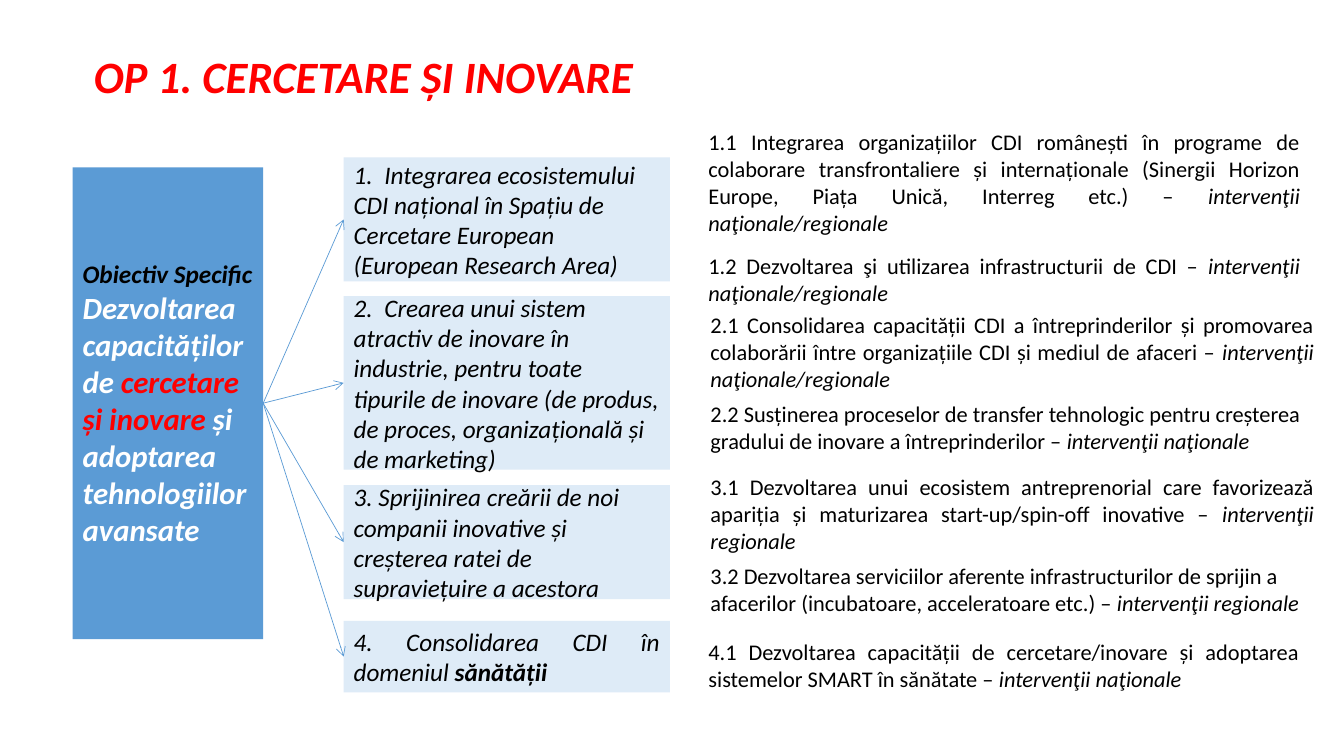
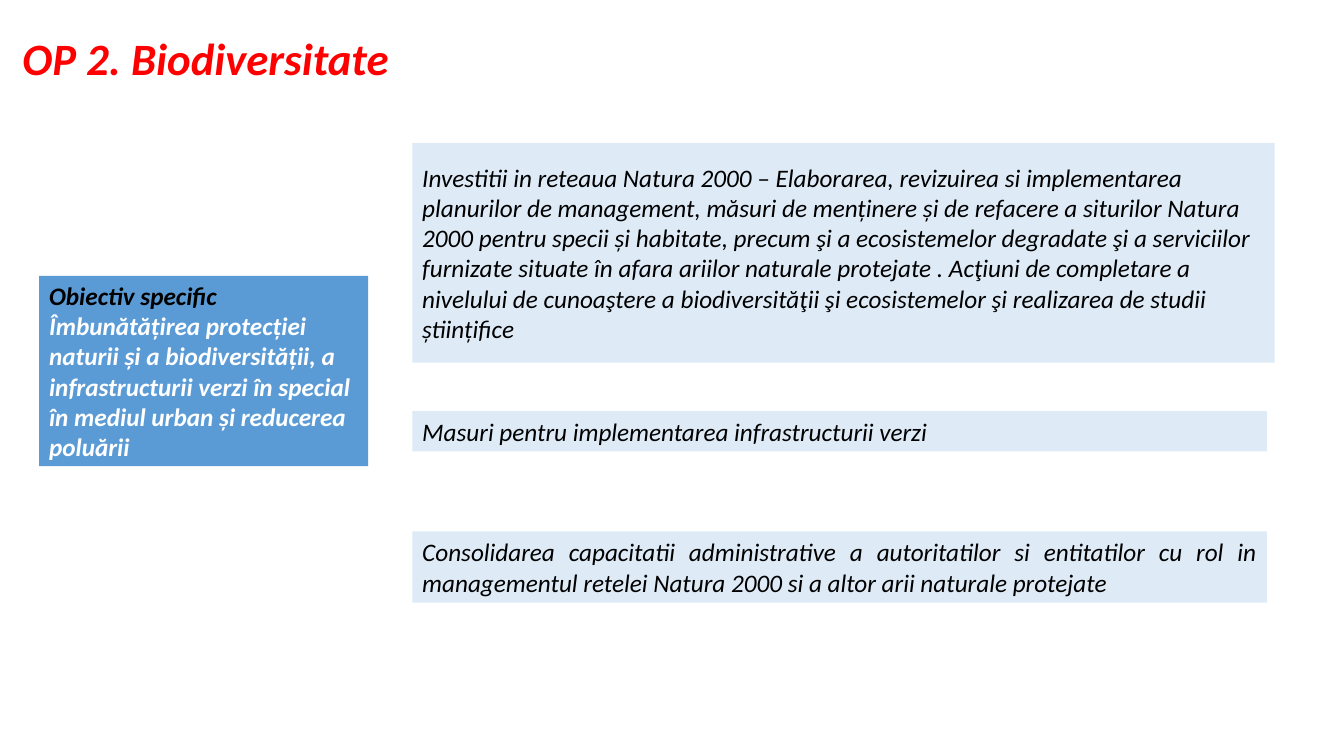
from lxml import etree
from pptx import Presentation
from pptx.dml.color import RGBColor
from pptx.enum.shapes import MSO_CONNECTOR, MSO_SHAPE
from pptx.enum.text import MSO_ANCHOR, PP_ALIGN
from pptx.oxml.ns import qn
from pptx.util import Pt

BLUE, PALE, RED, BLACK, WHITE = "5B9BD5", "DEEBF7", "FF0000", "000000", "FFFFFF"
TITLE = dict(size=Pt(32), bold=True, italic=True, color=RED)
OBJECTIVE = dict(size=Pt(18), bold=True, italic=True, color=WHITE)
LARGE = dict(size=Pt(22))
MEASURE = dict(size=Pt(18), italic=True, color=BLACK)
DETAIL = dict(size=Pt(16), color=BLACK)
LEFT, JUSTIFY = PP_ALIGN.LEFT, PP_ALIGN.JUSTIFY
RIGHT_SITE, LEFT_SITE = 3, 1
NUMBER_TAB = Pt(22)

NATIONAL = "intervenţii naţionale"
REGIONAL = "intervenţii regionale"
BOTH = "intervenţii naţionale/regionale"


def rgb(color):
    return RGBColor.from_string(color)


def add_number_tab(p):
    tabs = etree.SubElement(p._p.get_or_add_pPr(), qn("a:tabLst"))
    etree.SubElement(tabs, qn("a:tab"), pos=str(int(NUMBER_TAB)), algn="l")


def write(sp, paragraphs, base, inset=(0, 0), anchor=MSO_ANCHOR.TOP, before=0, after=0):
    """Fill a shape; a paragraph is (alignment, [(text, format changes), ...])."""
    tf = sp.text_frame
    x, y = map(Pt, inset)
    frame = dict(word_wrap=True, vertical_anchor=anchor, margin_left=x,
                 margin_right=x, margin_top=y, margin_bottom=y)
    for name, value in frame.items():
        setattr(tf, name, value)
    for i, (align, runs) in enumerate(paragraphs):
        p = tf.add_paragraph() if i else tf.paragraphs[0]
        p.alignment = align
        p.space_before, p.space_after = Pt(before if i else 0), Pt(after)
        if any("\t" in text for text, _ in runs):
            add_number_tab(p)
        for text, changes in runs:
            r = p.add_run()
            r.text = text
            style = {"name": "Calibri", **base, **changes}
            r.font.color.rgb = rgb(style.pop("color"))
            for name, value in style.items():
                setattr(r.font, name, value)


def add_text(s, box, paragraphs, base, **layout):
    sp = s.shapes.add_textbox(*map(Pt, box))
    write(sp, paragraphs, base, **layout)


def add_title(s, left, top, text):
    add_text(s, (left, top, 850, 39), [(LEFT, [(text, {})])], TITLE)


def add_panel(s, box, fill, paragraphs, base):
    sp = s.shapes.add_shape(MSO_SHAPE.RECTANGLE, *map(Pt, box))
    sp.shadow.inherit = False
    sp.fill.solid()
    sp.fill.fore_color.rgb = rgb(fill)
    sp.line.fill.background()
    write(sp, paragraphs, base, inset=(7.2, 3.6), anchor=MSO_ANCHOR.MIDDLE)
    return sp


def add_measures(s, left, measures):
    """Stack pale panels given as (top, width, height, alignment, runs)."""
    return [add_panel(s, (left, top, width, height), PALE, [(align, runs)], MEASURE)
            for top, width, height, align, runs in measures]


def add_details(s, box, details, after=0):
    paragraphs = [(align, [(f"{text} – ", {}), (scope, dict(italic=True))])
                  for align, text, scope in details]
    add_text(s, box, paragraphs, DETAIL, before=6, after=after)


def add_arrow(s, source, target):
    line = s.shapes.add_connector(MSO_CONNECTOR.STRAIGHT, 0, 0, 0, 0)
    line.begin_connect(source, RIGHT_SITE)
    line.end_connect(target, LEFT_SITE)
    line.line.color.rgb = rgb(BLUE)
    line.line.width = Pt(0.5)
    etree.SubElement(line.line._get_or_add_ln(), qn("a:tailEnd"), type="arrow")
    etree.SubElement(line._element.spPr, qn("a:effectLst"))


def build_research(s):
    add_title(s, 67, 34.5, "OP 1. CERCETARE ȘI INOVARE")
    objective = add_panel(s, (52, 119.5, 136, 337), BLUE, [(LEFT, [
        ("Obiectiv Specific ", dict(color=BLACK)),
        ("Dezvoltarea capacităților de ", LARGE),
        ("cercetare și inovare ", {**LARGE, "color": RED}),
        ("și adoptarea tehnologiilor avansate", LARGE)])], OBJECTIVE)
    measures = add_measures(s, 245.5, [
        (112.5, 233, 88.5, LEFT, [(
            "1.\tIntegrarea ecosistemului CDI național în Spațiu de Cercetare "
            "European (European Research Area)", {})]),
        (211.5, 233, 124, LEFT, [(
            "2.\tCrearea unui sistem atractiv de inovare în industrie, pentru toate "
            "tipurile de inovare (de produs, de proces, organizațională și de marketing)", {})]),
        (346.5, 233, 81.5, LEFT, [(
            "3. Sprijinirea creării de noi companii inovative și creșterea ratei de "
            "supraviețuire a acestora", {})]),
        (443.5, 233, 51, JUSTIFY, [
            ("4. Consolidarea CDI în domeniul ", {}), ("sănătății", dict(bold=True))]),
    ])
    for measure in measures:
        add_arrow(s, objective, measure)
    add_details(s, (506, 91.5, 422.5, 128), [
        (JUSTIFY, "1.1 Integrarea organizațiilor CDI românești în programe de colaborare "
         "transfrontaliere și internaționale (Sinergii Horizon Europe, Piața Unică, "
         "Interreg etc.)", BOTH),
        (JUSTIFY, "1.2 Dezvoltarea şi utilizarea infrastructurii de CDI", BOTH)], after=6)
    add_details(s, (507.5, 222.5, 431, 103), [
        (JUSTIFY, "2.1 Consolidarea capacității CDI a întreprinderilor și promovarea "
         "colaborării între organizațiile CDI și mediul de afaceri", BOTH),
        (LEFT, "2.2 Susținerea proceselor de transfer tehnologic pentru creșterea "
         "gradului de inovare a întreprinderilor", NATIONAL)])
    add_details(s, (507.5, 338, 431, 103), [
        (JUSTIFY, "3.1 Dezvoltarea unui ecosistem antreprenorial care favorizează apariția "
         "și maturizarea start-up/spin-off inovative", REGIONAL),
        (LEFT, "3.2 Dezvoltarea serviciilor aferente infrastructurilor de sprijin a "
         "afacerilor (incubatoare, acceleratoare etc.)", REGIONAL)])
    add_details(s, (506, 456, 422, 39), [
        (JUSTIFY, "4.1 Dezvoltarea capacității de cercetare/inovare și adoptarea sistemelor "
         "SMART în sănătate", NATIONAL)])


def build_biodiversity(s):
    add_title(s, 16, 22, "OP 2. Biodiversitate")
    add_panel(s, (28, 197, 235, 136), BLUE, [
        (LEFT, [("Obiectiv specific", dict(color=BLACK))]),
        (LEFT, [("Îmbunătățirea protecției naturii și a biodiversității, a infrastructurii "
                 "verzi în special în mediul urban și reducerea poluării", {})])], OBJECTIVE)
    add_measures(s, 294.5, [
        (102, 616, 157, LEFT, [(
            "Investitii in reteaua Natura 2000 – Elaborarea, revizuirea si implementarea "
            "planurilor de management, măsuri de menținere și de refacere a siturilor Natura "
            "2000 pentru specii și habitate, precum şi a ecosistemelor degradate şi a "
            "serviciilor furnizate situate în afara ariilor naturale protejate . Acţiuni de "
            "completare a nivelului de cunoaştere a biodiversităţii şi ecosistemelor şi "
            "realizarea de studii științifice", {})]),
        (293.5, 610.5, 29, JUSTIFY, [("Masuri pentru implementarea infrastructurii verzi", {})]),
        (379.5, 610.5, 51, JUSTIFY, [(
            "Consolidarea capacitatii administrative a autoritatilor si entitatilor cu rol in "
            "managementul retelei Natura 2000 si a altor arii naturale protejate", {})]),
    ])


def main():
    prs = Presentation()
    prs.slide_width, prs.slide_height = Pt(960), Pt(540)
    blank = prs.slide_layouts[6]
    for build in (build_research, build_biodiversity):
        build(prs.slides.add_slide(blank))
    prs.save("out.pptx")


if __name__ == "__main__":
    main()
